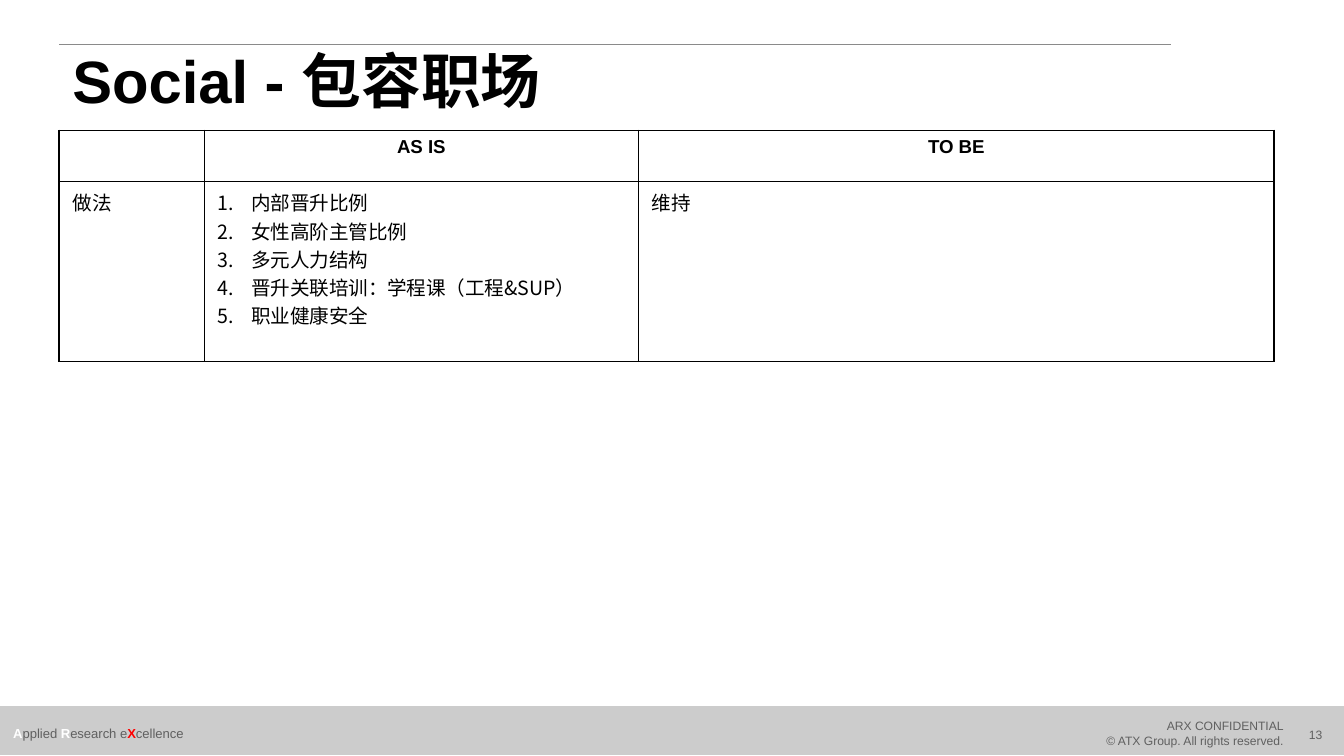
import pptx
import pptx.util
import pptx.dml.color
import pptx.enum.shapes
import pptx.enum.text
import pptx.oxml
import pptx.oxml.ns
from pptx.util import Inches

Pt = pptx.util.Pt
ALIGN = pptx.enum.text.PP_ALIGN
MIDDLE = pptx.enum.text.MSO_ANCHOR.MIDDLE
NS = pptx.oxml.ns.nsdecls("a")
GREY = "606060"


def color(code):
    return pptx.dml.color.RGBColor.from_string(code)


def style(font, size, code="000000", bold=False, name="Arial"):
    font.size, font.bold, font.name = Pt(size), bold, name
    font.color.rgb = color(code)


deck = pptx.Presentation()
deck.slide_width, deck.slide_height = Inches(10), Inches(10 * 9 / 16)
slide = deck.slides.add_slide(deck.slide_layouts[6])
shapes = slide.shapes

# Footer band
band = shapes.add_shape(pptx.enum.shapes.MSO_SHAPE.RECTANGLE,
                        Inches(0), Inches(5.26), Inches(10), Inches(0.35))
band.shadow.inherit = False
band.fill.solid()
band.fill.fore_color.rgb = band.line.color.rgb = color("CCCCCC")
band.line.width = Pt(1)

# Title, page number, rights and motto
texts = [
    (0.44, 0.35, 8.62, 0.55, ALIGN.LEFT, 32, "000000", True,
     ["Social - 包容职场"]),
    (9.51, 5.32, 0.56, 0.29, ALIGN.CENTER, 6.5, GREY, False, ["13"]),
    (7.97, 5.3, 1.68, 0.31, ALIGN.RIGHT, 6.5, GREY, False,
     ["ARX CONFIDENTIAL", "© ATX Group. All rights reserved."]),
    (0, 5.3, 1.91, 0.31, ALIGN.LEFT, 7, GREY, False, [""]),
]
for left, top, width, height, align, size, code, bold, lines in texts:
    box = shapes.add_textbox(Inches(left), Inches(top),
                             Inches(width), Inches(height))
    frame = box.text_frame
    frame.word_wrap = True
    frame.vertical_anchor = MIDDLE
    frame.text = "\n".join(lines)
    for para in frame.paragraphs:
        para.alignment = align
        style(para.font, size, code, bold)
        if size == 32:
            para.line_spacing = 0.9

motto = frame.paragraphs[0]
for words, code in [("A", "FFFFFF"), ("pplied ", GREY), ("R", "FFFFFF"),
                    ("esearch e", GREY), ("X", "FF0000"),
                    ("cellence", GREY)]:
    run = motto.add_run()
    run.text = words
    style(run.font, 7, code, code != GREY)

# Rule above the title
rule = shapes.add_connector(pptx.enum.shapes.MSO_CONNECTOR.STRAIGHT,
                            Inches(0.44), Inches(0.33),
                            Inches(8.71), Inches(0.33))
rule.line.color.rgb = color("8A8A8A")
rule.line.width = Pt(0.5)
props = rule._element.spPr
props.append(pptx.oxml.parse_xml(f"<a:effectLst {NS}/>"))

# Comparison table
steps = ["内部晋升比例", "女性高阶主管比例", "多元人力结构",
         "晋升关联培训：学程课（工程&SUP）", "职业健康安全"]
rows = [["", "AS IS", "TO BE"], ["做法", "\n".join(steps), "维持"]]
table = shapes.add_table(2, 3, Inches(0.44), Inches(0.97),
                         Inches(9.04), Inches(1.72)).table
table.first_row = table.horz_banding = False
for column, width in zip(table.columns, [1.08, 3.23, 4.73]):
    column.width = Inches(width)
for row, height in zip(table.rows, [0.38, 1.34]):
    row.height = Inches(height)

for r, row in enumerate(rows):
    for c, words in enumerate(row):
        cell = table.cell(r, c)
        cell.text = words
        cell.fill.background()
        borders = cell._tc.get_or_add_tcPr()
        for i, side in enumerate(["lnL", "lnR", "lnT", "lnB"]):
            borders.insert(i, pptx.oxml.parse_xml(
                f'<a:{side} {NS} w="12700"><a:solidFill>'
                f'<a:srgbClr val="000000"/></a:solidFill></a:{side}>'))
        listed = "\n" in words
        for para in cell.text_frame.paragraphs:
            if listed:
                indent = para._p.get_or_add_pPr()
                indent.set("marL", str(Inches(0.25)))
                indent.set("indent", str(-Inches(0.25)))
                indent.append(pptx.oxml.parse_xml(
                    f'<a:buAutoNum {NS} type="arabicPeriod"/>'))
            if r == 0:
                para.alignment = ALIGN.CENTER
            style(para.font, 10.5 if r else 10, bold=r == 0,
                  name="Noto Sans CJK SC" if listed else "Arial")

deck.save("out.pptx")
